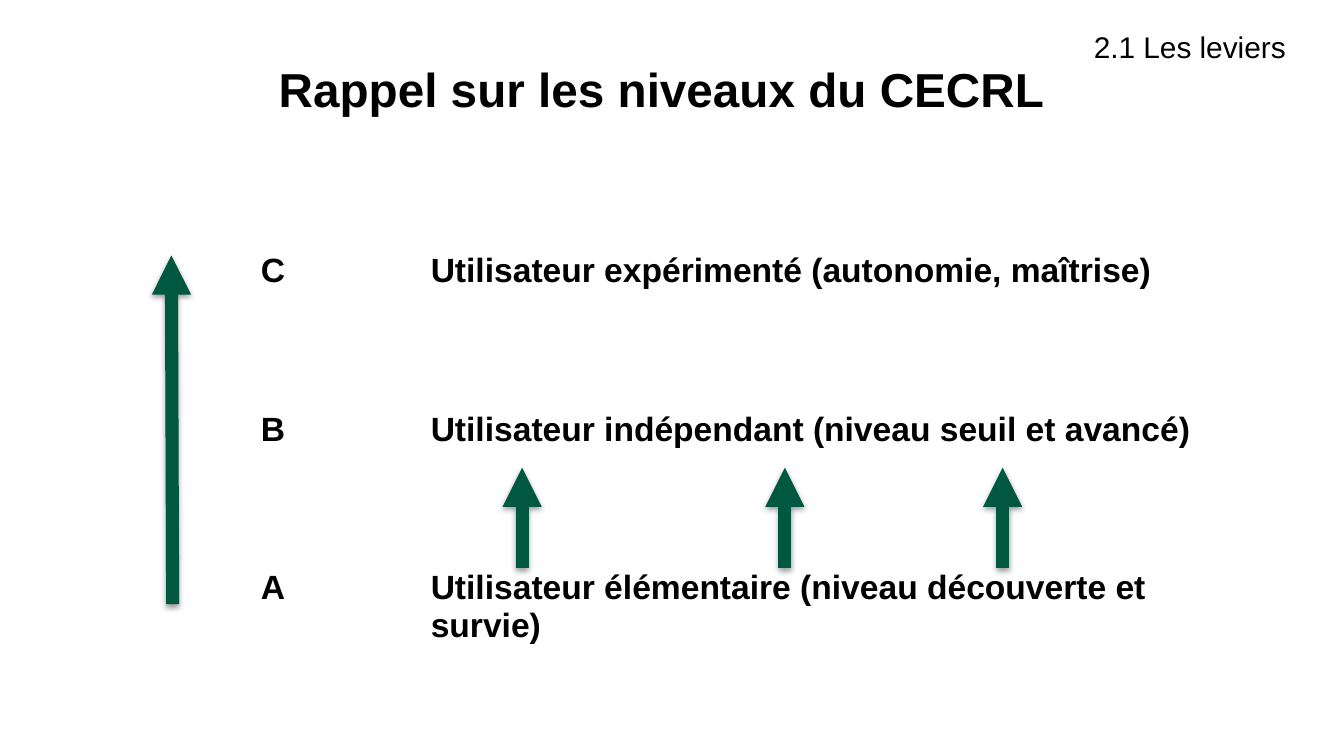
import pptx
import pptx.util
import pptx.dml.color
import pptx.enum.text
import pptx.enum.shapes
import pptx.oxml
import pptx.oxml.ns

SCALE = 4572
GREEN, BLACK, WHITE = "005841", "000000", "FFFFFF"
LEVELS = [
    ("C", "Utilisateur expérimenté (autonomie, maîtrise)"),
    ("B", "Utilisateur indépendant (niveau seuil et avancé)"),
    ("A", "Utilisateur élémentaire (niveau découverte et survie)"),
]


def px(*nums):
    """Turn px lengths into a list of EMU."""
    return [pptx.util.Emu(num * SCALE) for num in nums]


def color(target, code):
    """Give a colour format its hex colour."""
    target.rgb = pptx.dml.color.RGBColor.from_string(code)


def style(para, size, bold=False):
    """Format the runs of a paragraph."""
    for run in para.runs:
        run.font.name = "Arial"
        run.font.size = pptx.util.Pt(size)
        run.font.bold = bold
        color(run.font.color, BLACK)


def append(parent, body):
    """Add an XML element to a parent."""
    space = pptx.oxml.ns.nsdecls("a")
    tag, rest = body.split(" ", 1)
    parent.append(pptx.oxml.parse_xml(f"<a:{tag} {space} {rest}"))


def title(slide, box):
    """Place the centred title."""
    frame = slide.shapes.add_textbox(*px(*box)).text_frame
    frame.word_wrap = True
    frame.margin_left = frame.margin_right = 0
    frame.margin_top = frame.margin_bottom = 0
    frame.text = "Rappel sur les niveaux du CECRL "
    para = frame.paragraphs[0]
    para.alignment = pptx.enum.text.PP_ALIGN.CENTER
    para.line_spacing = 0.9
    style(para, 25.5, True)


def label(slide, box):
    """Place the section label."""
    frame = slide.shapes.add_textbox(*px(*box)).text_frame
    frame.word_wrap = True
    frame.auto_size = pptx.enum.text.MSO_AUTO_SIZE.SHAPE_TO_FIT_TEXT
    frame.text = "2.1 Les leviers"
    style(frame.paragraphs[0], 16)


def border(cell, first):
    """Draw white borders, thick under the first row."""
    props = cell._tc.get_or_add_tcPr()
    for side in "LRTB":
        width = pptx.util.Pt(3 if first and side == "B" else 1)
        append(props, f'ln{side} w="{width}"><a:solidFill><a:srgbClr val="{WHITE}"/>'
                      f'</a:solidFill></a:ln{side}>')


def levels(slide, box):
    """Place the level table, with a blank row between levels."""
    count = 2 * len(LEVELS) - 1
    grid = slide.shapes.add_table(count, 2, *px(*box)).table
    grid.first_row = grid.horz_banding = False
    code = 253
    grid.columns[0].width, grid.columns[1].width = px(code, box[2] - code)
    for num, row in enumerate(grid.rows):
        row.height = px(box[3] // count)[0]
        for col, cell in enumerate(row.cells):
            border(cell, num == 0)
            cell.fill.background()
            if num % 2 == 0:
                cell.text = LEVELS[num // 2][col]
                style(cell.text_frame.paragraphs[0], 18, True)


def arrow(slide, start, end):
    """Draw a thick green arrow with a soft shadow."""
    kind = pptx.enum.shapes.MSO_CONNECTOR.STRAIGHT
    link = slide.shapes.add_connector(kind, *px(*start, *end))
    link.line.width = pptx.util.Pt(7)
    color(link.line.color, GREEN)
    append(link.line._get_or_add_ln(), 'tailEnd type="triangle"/>')
    append(link._element.spPr,
           'effectLst ><a:outerShdw blurRad="40000" dist="20000" dir="5400000" '
           f'rotWithShape="0"><a:srgbClr val="{BLACK}"><a:alpha val="38000"/>'
           '</a:srgbClr></a:outerShdw></a:effectLst>')


def arrows(slide, box):
    """Place the tall arrow and the three short ones."""
    left, top, wide, high = box
    arrow(slide, (left + 2, top + high), (left, top))
    for shift in (522, 913, wide):
        arrow(slide, (left + shift, top + 465), (left + shift, top + 316))


def main():
    """Build and save the slide."""
    deck = pptx.Presentation()
    deck.slide_width, deck.slide_height = px(2000, 1125)
    slide = deck.slides.add_slide(deck.slide_layouts[6])
    title(slide, (368, 98, 1252, 144))
    levels(slide, (368, 365, 1479, 590))
    arrows(slide, (255, 380, 1237, 519))
    label(slide, (1608, 33, 352, 74))
    deck.save("out.pptx")


if __name__ == "__main__":
    main()
